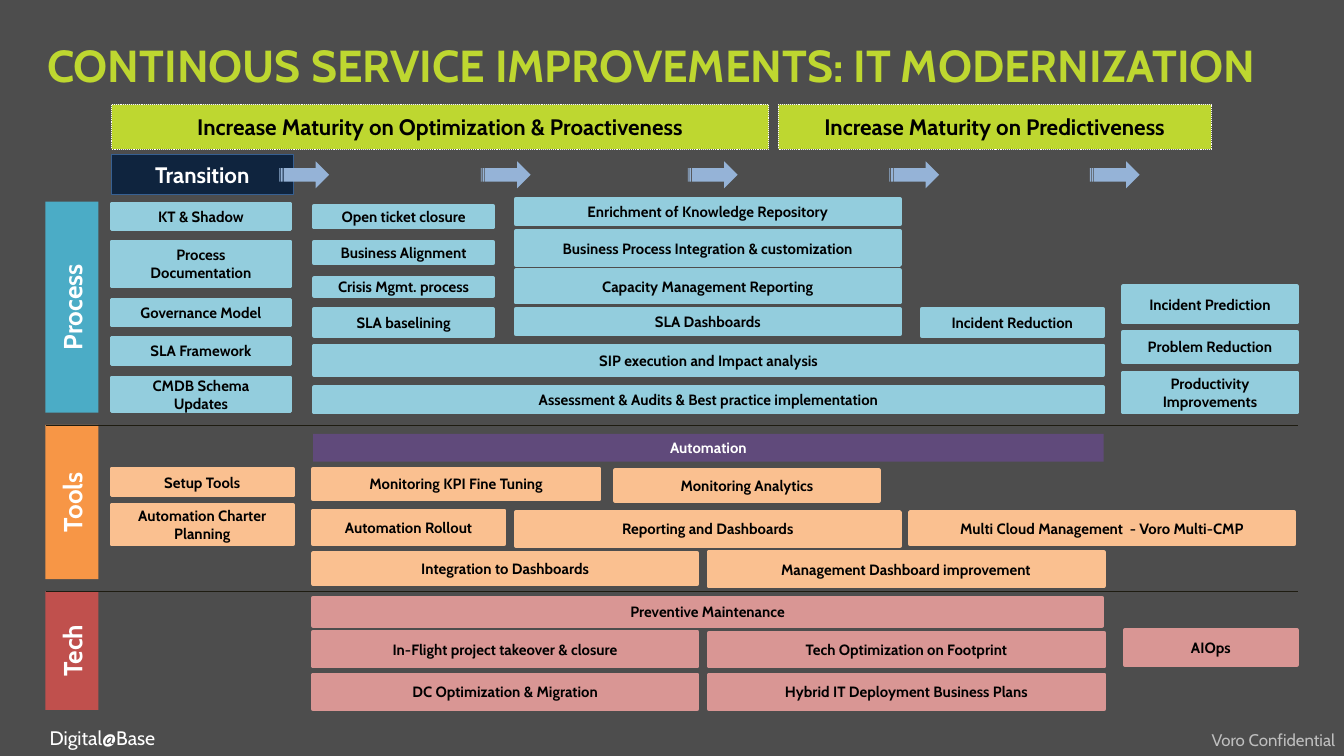
"""Build the service improvement roadmap slide for IT modernization."""
from lxml.etree import SubElement
from pptx import Presentation
from pptx.dml.color import RGBColor
from pptx.enum.dml import MSO_LINE
from pptx.enum.shapes import MSO_CONNECTOR, MSO_SHAPE
from pptx.enum.text import MSO_ANCHOR, MSO_AUTO_SIZE, PP_ALIGN
from pptx.oxml.ns import qn
from pptx.util import Cm, Pt

FONT = "Cabin"
BLACK = RGBColor(0x00, 0x00, 0x00)
WHITE = RGBColor(0xFF, 0xFF, 0xFF)
SILVER = RGBColor(0xBF, 0xBF, 0xBF)
CHARCOAL = RGBColor(0x4D, 0x4D, 0x4D)
LIME = RGBColor(0xBE, 0xD7, 0x30)
NAVY = RGBColor(0x0F, 0x24, 0x3E)
BLUE = RGBColor(0x37, 0x60, 0x92)
ARROW_BLUE = RGBColor(0x95, 0xB3, 0xD7)
TEAL = RGBColor(0x4B, 0xAC, 0xC6)
LIGHT_TEAL = RGBColor(0x93, 0xCD, 0xDD)
ORANGE = RGBColor(0xF7, 0x96, 0x46)
LIGHT_ORANGE = RGBColor(0xFA, 0xC0, 0x90)
RED = RGBColor(0xC0, 0x50, 0x4D)
LIGHT_RED = RGBColor(0xD9, 0x96, 0x94)
PURPLE = RGBColor(0x60, 0x4A, 0x7B)
DIVIDER = RGBColor(0x1E, 0x1C, 0x11)


def write(box, text, size=8, color=BLACK, bold=True, align=PP_ALIGN.CENTER,
          anchor=MSO_ANCHOR.MIDDLE):
    frame = box.text_frame
    frame.word_wrap = True
    frame.auto_size = MSO_AUTO_SIZE.NONE
    frame.vertical_anchor = anchor
    paragraph = frame.paragraphs[0]
    paragraph.alignment = align
    span = paragraph.add_run()
    span.text = text
    span.font.name = FONT
    span.font.size = Pt(size)
    span.font.bold = bold
    span.font.color.rgb = color


def add_block(left, top, width, height, fill, line=None, line_width=2,
              kind=MSO_SHAPE.RECTANGLE):
    block = page.shapes.add_shape(kind, Cm(left), Cm(top), Cm(width), Cm(height))
    block.shadow.inherit = False
    block.fill.solid()
    block.fill.fore_color.rgb = fill
    if line is None:
        block.line.fill.background()
    else:
        block.line.color.rgb = line
        block.line.width = Pt(line_width)
    return block


deck = Presentation()
deck.slide_width = Cm(25.4)
deck.slide_height = Cm(14.29)
page = deck.slides.add_slide(deck.slide_layouts[5])
page.background.fill.solid()
page.background.fill.fore_color.rgb = CHARCOAL

title = page.shapes.title
title.left, title.top, title.width, title.height = Cm(0.89), Cm(0.58), Cm(23.6), Cm(1.27)
title.text_frame.margin_left = 0
write(title, "CONTINOUS SERVICE IMPROVEMENTS: IT MODERNIZATION", size=24,
      color=LIME, align=PP_ALIGN.LEFT)

footers = [
    (0.69, 13.59, 2.84, "Digital@Base", 10.5, WHITE, PP_ALIGN.LEFT),
    (20.78, 13.67, 4.7, "Voro Confidential", 9, SILVER, PP_ALIGN.RIGHT),
]
for left, top, width, text, size, color, align in footers:
    footer = page.shapes.add_textbox(Cm(left), Cm(top), Cm(width), Cm(0.7))
    write(footer, text, size=size, color=color, bold=False, align=align,
          anchor=MSO_ANCHOR.TOP)

for left, width, text in [
    (2.11, 12.42, "Increase Maturity on Optimization & Proactiveness"),
    (14.71, 8.18, "Increase Maturity on Predictiveness"),
]:
    banner = add_block(left, 1.98, width, 0.84, LIME, WHITE, 0.5)
    banner.line.dash_style = MSO_LINE.ROUND_DOT
    write(banner, text, size=12)

transition = add_block(2.11, 2.92, 3.43, 0.76, NAVY, BLUE, 0.5)
write(transition, "Transition", size=12, color=WHITE)

for left in (5.28, 9.09, 13, 16.81, 20.6):
    add_block(left, 3.05, 0.94, 0.51, ARROW_BLUE, kind=MSO_SHAPE.STRIPED_RIGHT_ARROW)

for top, height, fill, text in [
    (3.81, 3.99, TEAL, "Process"),
    (8.03, 2.92, ORANGE, "Tools"),
    (11.18, 2.24, RED, "Tech"),
]:
    band = add_block(0.86, top, 1, height, fill)
    write(band, text, size=14, color=WHITE)
    band.text_frame._txBody.find(qn("a:bodyPr")).set("vert", "vert270")

for top in (8.03, 11.18):
    divider = page.shapes.add_connector(MSO_CONNECTOR.STRAIGHT, Cm(0.87), Cm(top),
                                        Cm(24.51), Cm(top))
    divider.line.color.rgb = DIVIDER
    divider.line.width = Pt(0.25)
    divider.line.dash_style = MSO_LINE.ROUND_DOT
    SubElement(divider._element.spPr, qn("a:effectLst"))

automation = add_block(5.92, 8.2, 14.94, 0.53, PURPLE)
write(automation, "Automation", color=WHITE)

activities = [
    (LIGHT_TEAL, 2.11, 3.38, [
        (3.86, 0.48, "KT & Shadow"),
        (4.57, 0.84, "Process Documentation"),
        (5.66, 0.48, "Governance Model"),
        (6.38, 0.51, "SLA Framework"),
        (7.14, 0.64, "CMDB Schema Updates"),
    ]),
    (LIGHT_TEAL, 5.94, 3.38, [
        (3.89, 0.41, "Open ticket closure"),
        (4.57, 0.41, "Business Alignment"),
        (5.26, 0.33, "Crisis Mgmt. process"),
        (5.84, 0.51, "SLA baselining"),
    ]),
    (LIGHT_TEAL, 9.75, 7.26, [
        (3.76, 0.48, "Enrichment of Knowledge Repository"),
        (4.37, 0.64, "Business Process Integration & customization"),
        (5.11, 0.61, "Capacity Management Reporting"),
        (5.84, 0.48, "SLA Dashboards"),
    ]),
    (LIGHT_TEAL, 5.94, 14.91, [
        (6.53, 0.56, "SIP execution and Impact analysis"),
        (7.32, 0.48, "Assessment & Audits & Best practice implementation"),
    ]),
    (LIGHT_TEAL, 17.42, 3.43, [(5.84, 0.51, "Incident Reduction")]),
    (LIGHT_TEAL, 21.23, 3.28, [
        (5.41, 0.69, "Incident Prediction"),
        (6.27, 0.58, "Problem Reduction"),
        (7.04, 0.76, "Productivity Improvements"),
    ]),
    (LIGHT_ORANGE, 2.11, 3.43, [
        (8.86, 0.51, "Setup Tools"),
        (9.55, 0.74, "Automation Charter Planning"),
    ]),
    (LIGHT_ORANGE, 5.92, 5.41, [(8.86, 0.58, "Monitoring KPI Fine Tuning")]),
    (LIGHT_ORANGE, 11.63, 4.98, [(8.89, 0.58, "Monitoring Analytics")]),
    (LIGHT_ORANGE, 5.92, 3.61, [(9.65, 0.64, "Automation Rollout")]),
    (LIGHT_ORANGE, 9.75, 7.26, [(9.68, 0.64, "Reporting and Dashboards")]),
    (LIGHT_ORANGE, 17.2, 7.26, [(9.68, 0.61, "Multi Cloud Management  - Voro Multi-CMP")]),
    (LIGHT_ORANGE, 5.92, 7.26, [(10.46, 0.58, "Integration to Dashboards")]),
    (LIGHT_ORANGE, 13.39, 7.47, [(10.44, 0.64, "Management Dashboard improvement")]),
    (LIGHT_RED, 5.92, 14.91, [(11.3, 0.53, "Preventive Maintenance")]),
    (LIGHT_RED, 5.92, 7.26, [
        (11.94, 0.66, "In-Flight project takeover & closure"),
        (12.75, 0.66, "DC Optimization & Migration"),
    ]),
    (LIGHT_RED, 13.4, 7.47, [
        (11.96, 0.64, "Tech Optimization on Footprint"),
        (12.75, 0.66, "Hybrid IT Deployment Business Plans"),
    ]),
    (LIGHT_RED, 21.26, 3.25, [(11.91, 0.66, "AIOps")]),
]
for color, left, width, rows in activities:
    for top, height, text in rows:
        write(add_block(left, top, width, height, color, color), text)

deck.save("out.pptx")
